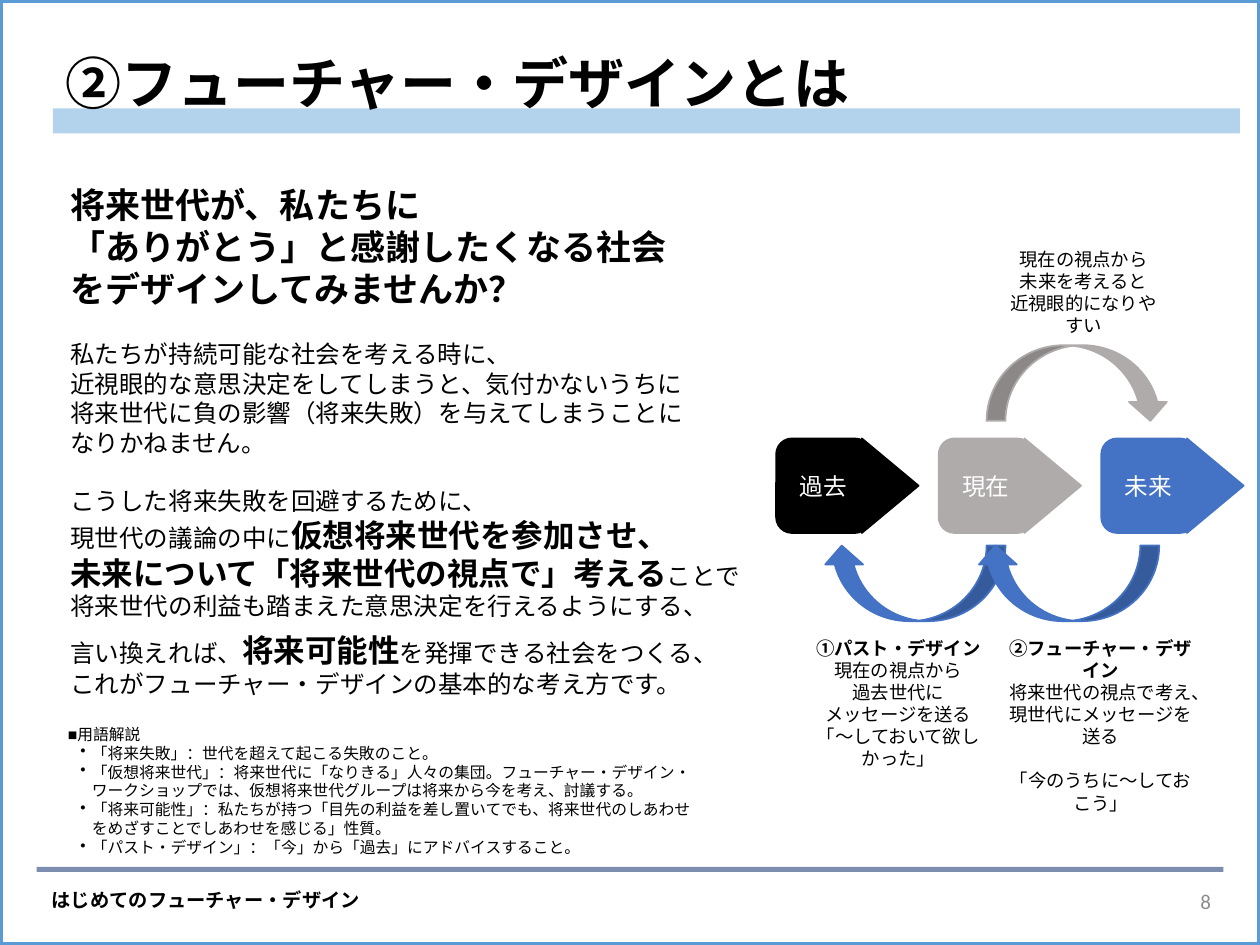
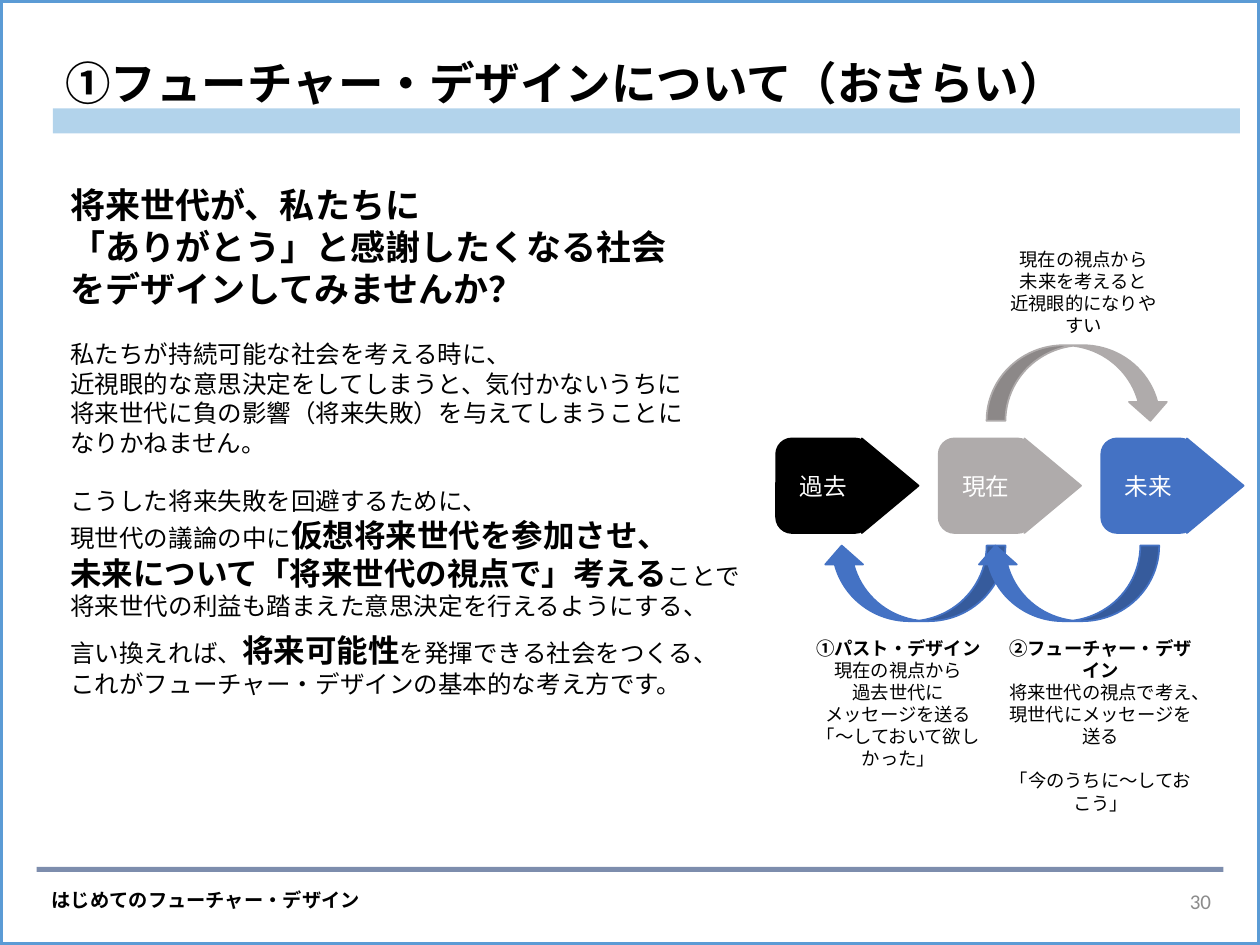
import pptx
import pptx.util
import pptx.dml.color
import pptx.enum.shapes
import pptx.enum.text
import pptx.oxml
import pptx.oxml.ns

Inches = pptx.util.Inches
Pt = pptx.util.Pt
RGBColor = pptx.dml.color.RGBColor
Shapes = pptx.enum.shapes.MSO_SHAPE
Align = pptx.enum.text.PP_ALIGN
Anchor = pptx.enum.text.MSO_ANCHOR
qn = pptx.oxml.ns.qn

BLACK = RGBColor(0x00, 0x00, 0x00)
WHITE = RGBColor(0xFF, 0xFF, 0xFF)
NAVY = RGBColor(0x00, 0x20, 0x60)
BAND_BLUE = RGBColor(0x00, 0x70, 0xC0)
FRAME_BLUE = RGBColor(0x5B, 0x9B, 0xD5)
FUTURE_BLUE = RGBColor(0x44, 0x72, 0xC4)
PRESENT_GRAY = RGBColor(0xAF, 0xAB, 0xAB)
NUMBER_GRAY = RGBColor(0x8C, 0x8C, 0x8C)

JAPANESE = "Noto Sans CJK JP"
TITLE_FONT = "Arial"
SMALL_FONT = "Calibri"
LINE_HEIGHT = 1.2

HEADLINE = ["将来世代が、私たちに", "「ありがとう」と感謝したくなる社会", "をデザインしてみませんか？"]
BODY_GROUPS = [
    (14, [
        ["私たちが持続可能な社会を考える時に、"],
        ["近視眼的な意思決定をしてしまうと、気付かないうちに"],
        ["将来世代に負の影響（将来失敗）を与えてしまうことに"],
        ["なりかねません。"],
    ]),
    (14, [
        ["こうした将来失敗を回避するために、"],
        ["現世代の議論の中に", "*仮想将来世代を参加させ、"],
        ["*未来について「将来世代の視点で」考える", "ことで"],
        ["将来世代の利益も踏まえた意思決定を行えるようにする、"],
    ]),
    (5, [
        ["言い換えれば、", "*将来可能性", "を発揮できる社会をつくる、"],
        ["これがフューチャー・デザインの基本的な考え方です。"],
    ]),
]
GLOSSARY = [
    "「将来失敗」：世代を超えて起こる失敗のこと。",
    "「仮想将来世代」：将来世代に「なりきる」人々の集団。フューチャー・デザイン・ワークショップでは、"
    "仮想将来世代グループは将来から今を考え、討議する。",
    "「将来可能性」：私たちが持つ「目先の利益を差し置いてでも、将来世代のしあわせをめざすことで"
    "しあわせを感じる」性質。",
    "「パスト・デザイン」：「今」から「過去」にアドバイスすること。",
]
ERAS = [("過去", BLACK), ("現在", PRESENT_GRAY), ("未来", FUTURE_BLUE)]
SHORT_SIGHT = ["現在の視点から", "未来を考えると", "近視眼的になりやすい"]
PAST_DESIGN = ["①パスト・デザイン", "現在の視点から", "過去世代に", "メッセージを送る",
               "「～しておいて欲しかった」"]
FUTURE_DESIGN = ["②フューチャー・デザイン", "将来世代の視点で考え、",
                 "現世代にメッセージを送る", "「今のうちに～しておこう」"]


def add_run(paragraph, text, size, font, color=BLACK, bold=False):
    run = paragraph.add_run()
    run.text = text
    run.font.size = Pt(size)
    run.font.name = font
    run.font.bold = bold
    run.font.color.rgb = color
    east_asian = pptx.oxml.parse_xml(
        f'<a:ea xmlns:a="{pptx.oxml.ns.nsuri("a")}" typeface="{font}"/>')
    run.font._element.find(qn("a:latin")).addnext(east_asian)


def next_paragraph(frame):
    first = frame.paragraphs[0]
    return frame.add_paragraph() if first.runs else first


def add_text_frame(slide, box, anchor=Anchor.TOP):
    frame = slide.shapes.add_textbox(*map(Inches, box)).text_frame
    frame.word_wrap = True
    frame.vertical_anchor = anchor
    return frame


def add_filled_shape(slide, kind, box, fill, outline=None, alpha=None, rotation=0):
    shape = slide.shapes.add_shape(kind, *map(Inches, box))
    shape.shadow.inherit = False
    shape.rotation = rotation
    shape.fill.solid()
    shape.fill.fore_color.rgb = fill
    if outline is None:
        shape.line.fill.background()
    else:
        shape.line.color.rgb = outline
        shape.line.width = Pt(1)
    if alpha is not None:
        color = shape.fill._xPr.find(qn("a:solidFill"))[0]
        color.append(pptx.oxml.parse_xml(
            f'<a:alpha xmlns:a="{pptx.oxml.ns.nsuri("a")}" val="{alpha * 1000}"/>'))
    return shape


def add_frame(slide, box):
    frame = slide.shapes.add_shape(Shapes.RECTANGLE, *map(Inches, box))
    frame.shadow.inherit = False
    frame.fill.background()
    frame.line.color.rgb = FRAME_BLUE
    frame.line.width = Pt(3)


def add_title(slide, box, title, size):
    left, top, width, height = box
    add_filled_shape(slide, Shapes.RECTANGLE, (left, top + 0.71, 9.42, 0.2), BAND_BLUE, alpha=30)
    paragraph = add_text_frame(slide, box, Anchor.MIDDLE).paragraphs[0]
    paragraph.line_spacing = 0.9
    add_run(paragraph, title, size, TITLE_FONT, bold=True)


def add_footer(slide, box, number):
    left, top, width, height = box
    add_filled_shape(slide, Shapes.RECTANGLE, (left, top, width, 0.04), NAVY, alpha=51)
    label = add_text_frame(slide, (left + 0.12, top + 0.12, 2.67, 0.29))
    label.margin_left = 0
    label.word_wrap = False
    add_run(label.paragraphs[0], "はじめてのフューチャー・デザイン", 11, SMALL_FONT, bold=True)
    number_box = (left + width - 2.25, top + 0.07, 2.25, 0.4)
    paragraph = add_text_frame(slide, number_box, Anchor.MIDDLE).paragraphs[0]
    paragraph.alignment = Align.RIGHT
    add_run(paragraph, str(number), 12, SMALL_FONT, NUMBER_GRAY)


def add_body(slide, box):
    frame = add_text_frame(slide, box)
    for line in HEADLINE:
        add_run(next_paragraph(frame), line, 20, JAPANESE, bold=True)
    for gap, lines in BODY_GROUPS:
        for index, parts in enumerate(lines):
            paragraph = next_paragraph(frame)
            if index == 0:
                paragraph.space_before = Pt(gap * LINE_HEIGHT)
            for part in parts:
                strong = part.startswith("*")
                add_run(paragraph, part.lstrip("*"), 18 if strong else 14, JAPANESE, bold=strong)


def add_glossary(slide, box):
    frame = add_text_frame(slide, box)
    add_run(frame.paragraphs[0], "■用語解説", 9, TITLE_FONT)
    for entry in GLOSSARY:
        paragraph = next_paragraph(frame)
        properties = paragraph._p.get_or_add_pPr()
        properties.set("marL", str(Inches(0.19)))
        properties.set("indent", str(Inches(-0.09)))
        properties.append(pptx.oxml.parse_xml(
            f'<a:buChar xmlns:a="{pptx.oxml.ns.nsuri("a")}" char="•"/>'))
        add_run(paragraph, entry, 9, TITLE_FONT)


def add_caption(slide, box, lines, heading=False, gap_before=None):
    frame = add_text_frame(slide, box)
    for index, line in enumerate(lines):
        paragraph = next_paragraph(frame)
        paragraph.alignment = Align.CENTER
        if index == gap_before:
            paragraph.space_before = Pt(10.5 * LINE_HEIGHT)
        add_run(paragraph, line, 10.5, JAPANESE, bold=heading and index == 0)


def add_era(slide, box, name, color):
    left, top, side, _ = box
    block = add_filled_shape(slide, Shapes.ROUNDED_RECTANGLE, box, color, color)
    block.text_frame.vertical_anchor = Anchor.MIDDLE
    paragraph = block.text_frame.paragraphs[0]
    paragraph.alignment = Align.CENTER
    add_run(paragraph, name, 13.5, SMALL_FONT, WHITE)
    add_filled_shape(slide, Shapes.ISOSCELES_TRIANGLE, (left + 0.53, top + 0.15, side, 0.45),
                     color, color, rotation=90)


def add_time_diagram(slide, box):
    left, top, width, height = box
    for index, (name, color) in enumerate(ERAS):
        add_era(slide, (left + 1.29 * index, top + 1.56, 0.75, 0.75), name, color)
    for x, y, color, rotation in [(1.67, 0.82, PRESENT_GRAY, 0), (0.37, 2.41, FUTURE_BLUE, 180),
                                  (1.59, 2.41, FUTURE_BLUE, 180)]:
        add_filled_shape(slide, Shapes.CURVED_DOWN_ARROW, (left + x, top + y, 1.45, 0.6),
                         color, color, rotation=rotation)
    add_caption(slide, (left + 1.69, top, 1.5, 0.63), SHORT_SIGHT)
    add_caption(slide, (left + 1.73, top + 3.09, 1.69, 0.98), FUTURE_DESIGN, True, 3)
    add_caption(slide, (left + 0.14, top + 3.09, 1.66, 0.98), PAST_DESIGN, True)


def add_concept_slide(presentation, title, title_size, number, with_glossary):
    slide = presentation.slides.add_slide(presentation.slide_layouts[6])
    add_frame(slide, (0, 0, 10, 7.5))
    add_title(slide, (0.42, 0.15, 8.62, 1.07), title, title_size)
    add_footer(slide, (0.29, 6.88, 9.42, 0.47), number)
    add_body(slide, (0.46, 1.41, 5.65, 5.34))
    add_time_diagram(slide, (6.16, 1.92, 3.73, 4.07))
    if with_glossary:
        add_glossary(slide, (0.44, 5.7, 5.25, 1.16))


def main():
    presentation = pptx.Presentation()
    presentation.slide_width = Inches(10)
    presentation.slide_height = Inches(7.5)
    add_concept_slide(presentation, "②フューチャー・デザインとは", 32, 8, True)
    add_concept_slide(presentation, "①フューチャー・デザインについて（おさらい）", 26, 30, False)
    presentation.save("out.pptx")


if __name__ == "__main__":
    main()
